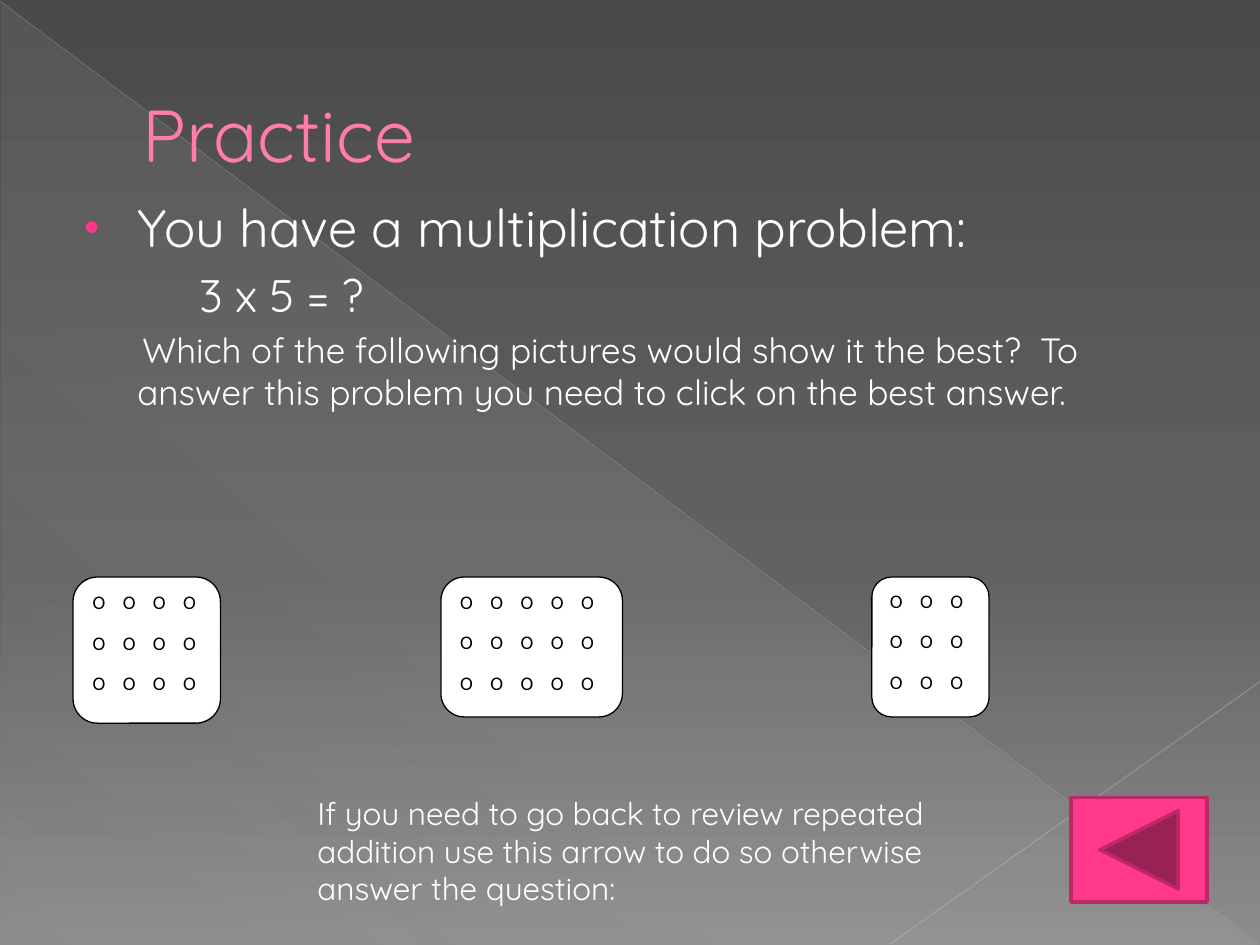
from dataclasses import dataclass

from lxml import etree
from pptx import Presentation
from pptx.dml.color import RGBColor
from pptx.enum import shapes, text
from pptx.oxml import ns
from pptx.util import Inches, Pt


@dataclass(frozen=True)
class Theme:
    font: str = "Quicksand"
    card_font: str = "Calibri"
    white: str = "FFFFFF"
    black: str = "000000"
    pink: str = "FF388C"
    pink_edge: str = "BD2968"
    title: str = "FF7DA7"
    title_edge: str = "B12761"
    title_size: int = 42
    lead_size: int = 30
    sum_size: int = 26
    question_size: int = 20
    hint_size: int = 18
    card_size: int = 11
    backdrop: tuple = ((0, "4A4A4A", 100), (60, "626262", 100), (100, "8C8C8C", 100))
    sheen: tuple = ((0, "D2D2D2", 10), (70, "D2D2D2", 8), (100, "D2D2D2", 1))


THEME = Theme()
ROWS = 3
DOT_GAP = 0.24


def rgb(value):
    return RGBColor.from_string(value)


def sub(parent, tag, **attributes):
    return etree.SubElement(parent, ns.qn(tag), attributes)


def box(left, top, width, height):
    return [Inches(n) for n in (left, top, width, height)]


def place(shape, *at):
    shape.left, shape.top, shape.width, shape.height = box(*at)


def set_gradient(fill, root, stops, angle):
    fill.gradient()
    fill.gradient_angle = 360 - angle
    stop_list = root.find(".//" + ns.qn("a:gsLst"))
    for stop in list(stop_list):
        stop_list.remove(stop)
    for position, color, opacity in stops:
        stop = sub(stop_list, "a:gs", pos=str(position * 1000))
        shade = sub(stop, "a:srgbClr", val=color)
        sub(shade, "a:alpha", val=str(opacity * 1000))


def add_run(paragraph, words, size, color=THEME.white, font=THEME.font):
    run = paragraph.add_run()
    run.text = words
    run.font.size = Pt(size)
    run.font.name = font
    run.font.color.rgb = rgb(color)
    return run


def set_indent(paragraph, margin, first=0):
    properties = paragraph._p.get_or_add_pPr()
    properties.set("marL", str(Inches(margin)))
    properties.set("indent", str(Inches(first)))
    return properties


def add_shape(slide, kind, at, fill=None, edge=None, width=0.75):
    shape = slide.shapes.add_shape(kind, *box(*at))
    shape.shadow.inherit = False
    if fill:
        shape.fill.solid()
        shape.fill.fore_color.rgb = rgb(fill)
    if edge:
        shape.line.color.rgb = rgb(edge)
        shape.line.width = Pt(width)
    else:
        shape.line.fill.background()
    return shape


def add_ray(slide, start, end, color, width, opacity):
    ray = slide.shapes.add_connector(
        shapes.MSO_CONNECTOR.STRAIGHT, *[Inches(n) for n in start + end])
    ray.line.color.rgb = rgb(color)
    ray.line.width = Pt(width)
    properties = ray._element.spPr
    sub(properties.find(".//" + ns.qn("a:srgbClr")), "a:alpha", val=str(opacity * 1000))
    sub(properties, "a:effectLst")


def add_backdrop(slide):
    set_gradient(slide.background.fill, slide._element, THEME.backdrop, 90)
    sheen = add_shape(slide, shapes.MSO_SHAPE.RIGHT_TRIANGLE, (0.01, 0.02, 9.98, 7.48))
    set_gradient(sheen.fill, sheen._element, THEME.sheen, 133)
    add_ray(slide, (0, 0.01), (9.99, 7.49), "BFBFBF", 0.39, 35)
    add_ray(slide, (10, 5.41), (7.07, 7.49), "C6C6C6", 0.47, 45)


def fill_title(title):
    place(title, 0.5, 0.29, 9, 1.53)
    frame = title.text_frame
    frame.auto_size = text.MSO_AUTO_SIZE.NONE
    frame.vertical_anchor = text.MSO_ANCHOR.MIDDLE
    heading = frame.paragraphs[0]
    heading.alignment = text.PP_ALIGN.LEFT
    set_indent(heading, 0.53)
    run = add_run(heading, "Practice", THEME.title_size, THEME.title)
    outline = etree.Element(ns.qn("a:ln"), w=str(Pt(0.5)))
    sub(sub(outline, "a:solidFill"), "a:srgbClr", val=THEME.title_edge)
    run._r.get_or_add_rPr().insert(0, outline)


def fill_body(body):
    place(body, 0.5, 1.5, 9, 2.08)
    frame = body.text_frame
    frame.auto_size = text.MSO_AUTO_SIZE.NONE

    lead = frame.paragraphs[0]
    bullet = set_indent(lead, 0.49, -0.42)
    sub(sub(bullet, "a:buClr"), "a:srgbClr", val=THEME.pink)
    sub(bullet, "a:buSzPct", val="80000")
    sub(bullet, "a:buFont", typeface="Arial")
    sub(bullet, "a:buChar", char="•")
    add_run(lead, "You have a multiplication problem:", THEME.lead_size)

    problem = frame.add_paragraph()
    problem.level = 1
    sub(set_indent(problem, 0.98), "a:buNone")
    add_run(problem, "3 x 5 = ?", THEME.sum_size)

    question = frame.add_paragraph()
    sub(set_indent(question, 0.49, 0.04), "a:buNone")
    add_run(question, "Which of the following pictures would show it the best?  "
            "To answer this problem you need to click on the best answer.",
            THEME.question_size)


def add_answer(slide, left, width, height, columns):
    card = add_shape(slide, shapes.MSO_SHAPE.ROUNDED_RECTANGLE,
                     (left, 4.58, width, height), THEME.white, THEME.black)
    frame = card.text_frame
    frame.word_wrap = True
    frame.margin_right = 0
    frame.vertical_anchor = text.MSO_ANCHOR.TOP
    for row in range(ROWS):
        dots = frame.add_paragraph() if row else frame.paragraphs[0]
        dots.alignment = text.PP_ALIGN.LEFT
        dots.space_after = Pt(10)
        tabs = sub(dots._p.get_or_add_pPr(), "a:tabLst")
        for column in range(1, columns):
            sub(tabs, "a:tab", pos=str(Inches(column * DOT_GAP)), algn="l")
        add_run(dots, "\t".join("O" * columns), THEME.card_size,
                THEME.black, THEME.card_font)


def add_hint(slide):
    hint = slide.shapes.add_textbox(*box(2.42, 6.25, 5.58, 1.01))
    frame = hint.text_frame
    frame.word_wrap = True
    frame.auto_size = text.MSO_AUTO_SIZE.SHAPE_TO_FIT_TEXT
    add_run(frame.paragraphs[0], "If you need to go back to review repeated addition "
            "use this arrow to do so otherwise answer the question:", THEME.hint_size)


def main():
    deck = Presentation()
    deck.slide_width, deck.slide_height = Inches(10), Inches(7.5)
    slide = deck.slides.add_slide(deck.slide_layouts[1])
    title, body = slide.placeholders

    # Backdrop, kept behind the placeholders
    add_backdrop(slide)
    for placeholder in (title, body):
        slide.shapes._spTree.append(placeholder._element)

    # Problem
    fill_title(title)
    fill_body(body)

    # Answer cards: left, width, height, dots per row
    for answer in ((0.58, 1.17, 1.16, 4), (3.5, 1.44, 1.11, 5), (6.92, 0.93, 1.11, 3)):
        add_answer(slide, *answer)

    # Way back to the review
    add_hint(slide)
    add_shape(slide, shapes.MSO_SHAPE.ACTION_BUTTON_BACK_OR_PREVIOUS,
              (8.5, 6.33, 1.08, 0.83), THEME.pink, THEME.pink_edge, 2)

    deck.save("out.pptx")


if __name__ == "__main__":
    main()
